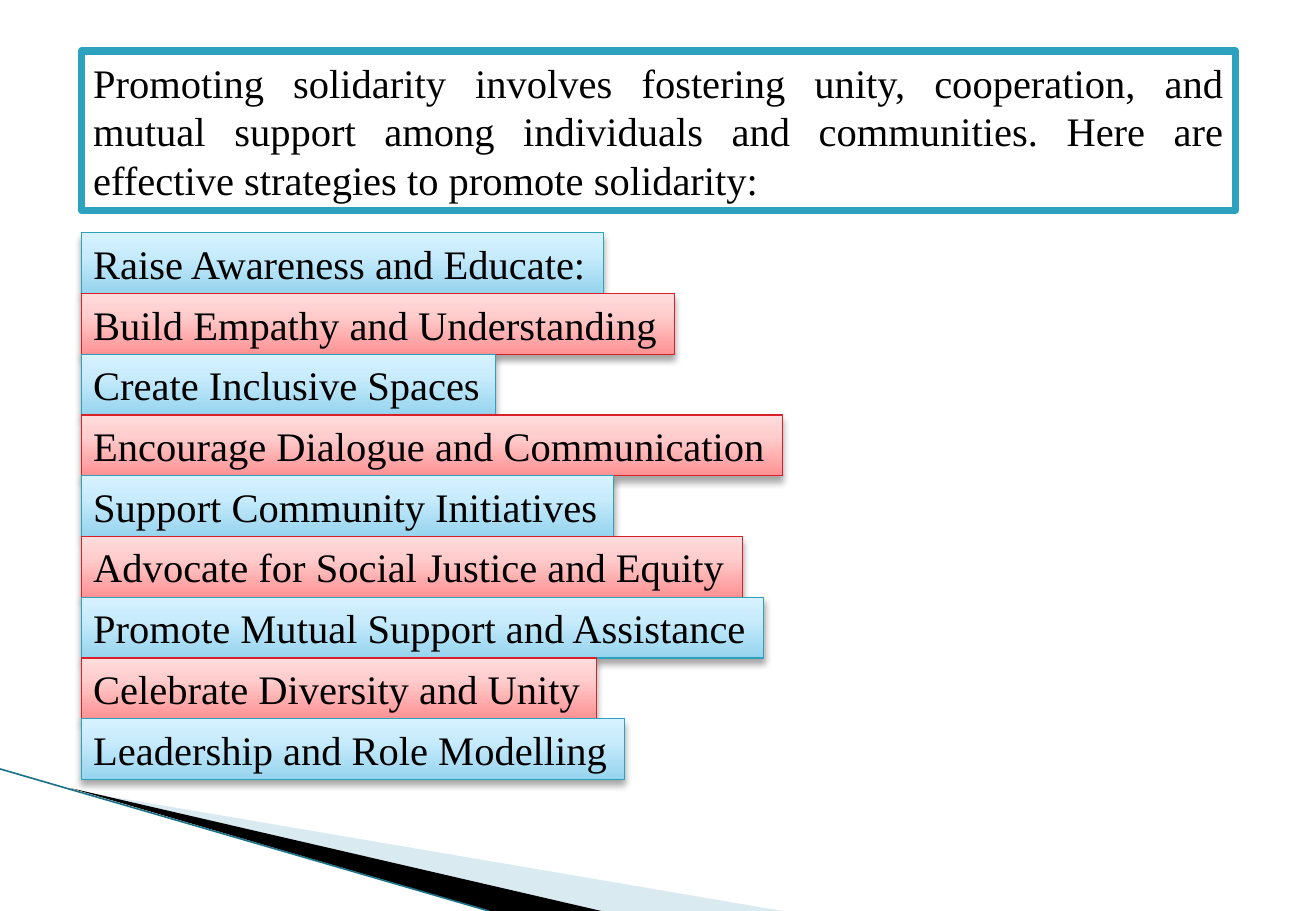
from lxml import etree
from pptx import Presentation
from pptx import util as u
from pptx.dml.color import RGBColor
from pptx.enum import shapes, text
from pptx.oxml.ns import qn

TEAL, RED, BLACK, WHITE = "2DA2BF", "DA1F28", "000000", "FFFFFF"
BLUE_STYLE = (TEAL, ((0, "96D4EE"), (65, "C9ECFC"), (100, "D7F2FF")))
RED_STYLE = (RED, ((0, "FF9294"), (65, "FFCDCD"), (100, "FFDCDC")))
INTRO = ("Promoting solidarity involves fostering unity, cooperation, and mutual support "
         "among individuals and communities. Here are effective strategies to promote solidarity:")
STRATEGIES = (
    ("Raise Awareness and Educate:", 10.92),
    ("Build Empathy and Understanding", 12.4),
    ("Create Inclusive Spaces", 8.66),
    ("Encourage Dialogue and Communication", 14.66),
    ("Support Community Initiatives", 11.13),
    ("Advocate for Social Justice and Equity", 13.82),
    ("Promote Mutual Support and Assistance", 14.27),
    ("Celebrate Diversity and Unity", 10.77),
    ("Leadership and Role Modelling", 11.35),
)
LEFT, FIRST_TOP, ROW_HEIGHT = 1.7, 4.87, 1.27


def color(value):
    return RGBColor.from_string(value)


def add_color(parent, value, alpha=None):
    element = etree.SubElement(parent, qn("a:srgbClr"), val=value)
    if alpha is not None:
        etree.SubElement(element, qn("a:alpha"), val=str(alpha * 1000))


class SlideBuilder:
    """Draws the elements of one page in a shared style."""

    def __init__(self, page, font="Times New Roman", size=24):
        self.page, self.font, self.size = page, font, size

    def wedge(self, points, fill, alpha=100):
        corners = [(u.Cm(x), u.Cm(y)) for x, y in points]
        builder = self.page.shapes.build_freeform(*corners[0])
        builder.add_line_segments(corners[1:], close=True)
        wedge = builder.convert_to_shape()
        wedge.shadow.inherit = False
        wedge.line.fill.background()
        wedge.fill.solid()
        wedge.fill.fore_color.rgb = color(fill)
        tint = wedge.fill._xPr.find(qn("a:solidFill"))[0]
        etree.SubElement(tint, qn("a:alpha"), val=str(alpha * 1000))

    def line(self, start, end, stroke, width):
        ends = [u.Cm(value) for value in (*start, *end)]
        line = self.page.shapes.add_connector(shapes.MSO_CONNECTOR.STRAIGHT, *ends)
        line.line.color.rgb = color(stroke)
        line.line.width = u.Pt(width)
        etree.SubElement(line._element.spPr, qn("a:effectLst"))

    def box(self, frame, wording, stroke, width, align, anchor, wrap):
        box = self.page.shapes.add_shape(
            shapes.MSO_SHAPE.RECTANGLE, *[u.Cm(value) for value in frame])
        box.shadow.inherit = False
        box.fill.solid()
        box.fill.fore_color.rgb = color(WHITE)
        box.line.color.rgb = color(stroke)
        box.line.width = u.Pt(width)
        body = box.text_frame
        body.word_wrap = wrap
        body.auto_size = text.MSO_AUTO_SIZE.SHAPE_TO_FIT_TEXT
        body.vertical_anchor = anchor
        para = body.paragraphs[0]
        para.alignment = align
        span = para.add_run()
        span.text = wording
        span.font.name, span.font.size = self.font, u.Pt(self.size)
        span.font.color.rgb = color(BLACK)
        return box

    def intro(self, frame, wording):
        box = self.box(frame, wording, TEAL, 4.33, text.PP_ALIGN.JUSTIFY,
                       text.MSO_ANCHOR.MIDDLE, True)
        etree.SubElement(box.line._ln, qn("a:round"))

    def strategy(self, frame, wording, style):
        stroke, stops = style
        box = self.box(frame, wording, stroke, 0.75, text.PP_ALIGN.LEFT,
                       text.MSO_ANCHOR.TOP, False)
        box.fill.gradient()
        box.fill.gradient_angle = 90
        stop_list = box._element.spPr.find(".//" + qn("a:gsLst"))
        for stop in list(stop_list):
            stop_list.remove(stop)
        for position, value in stops:
            add_color(etree.SubElement(stop_list, qn("a:gs"), pos=str(position * 1000)), value)
        effects = box._element.spPr.find(qn("a:effectLst"))
        shadow = etree.SubElement(
            effects, qn("a:outerShdw"), blurRad=str(u.Pt(4)), dist=str(u.Pt(3)),
            dir="5400000", rotWithShape="0")
        add_color(shadow, BLACK, 35)


def main():
    deck = Presentation()
    deck.slide_width, deck.slide_height = u.Cm(27.51), u.Cm(19.05)
    builder = SlideBuilder(deck.slides.add_slide(deck.slide_layouts[6]))
    builder.wedge([(1.5, 16.52), (16.36, 19.05), (12.55, 19.05)], "A0CBDC", 40)
    builder.wedge([(1.47, 16.48), (12.57, 19.05), (10.24, 19.05)], BLACK)
    builder.line((0, 16.08), (10.22, 19.05), "1B7287", 0.95)
    builder.intro((LEFT, 1.07, 24.13, 3.33), INTRO)
    for row, (wording, width) in enumerate(STRATEGIES):
        frame = (LEFT, FIRST_TOP + row * ROW_HEIGHT, width, ROW_HEIGHT)
        builder.strategy(frame, wording, RED_STYLE if row % 2 else BLUE_STYLE)
    deck.save("out.pptx")


if __name__ == "__main__":
    main()
